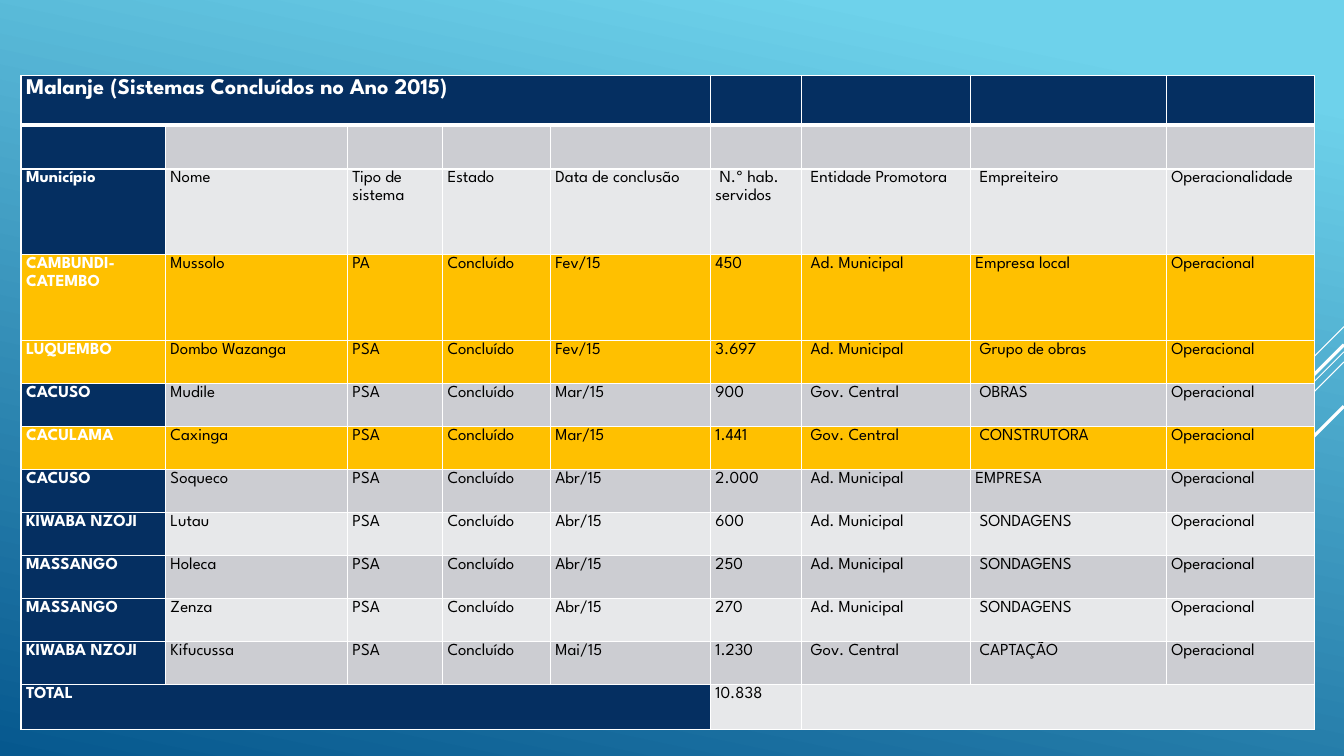
from pptx import Presentation
from pptx.dml.color import RGBColor
from pptx.enum.shapes import MSO_CONNECTOR
from pptx.oxml import parse_xml
from pptx.oxml.ns import nsdecls
from pptx.oxml.xmlchemy import OxmlElement
from pptx.util import Pt

NAVY = RGBColor(0x05, 0x2F, 0x61)
GOLD = RGBColor(0xFF, 0xC0, 0x00)
GREY = RGBColor(0xCC, 0xCD, 0xD2)
PALE = RGBColor(0xE7, 0xE8, 0xEA)
WHITE = RGBColor(0xFF, 0xFF, 0xFF)
BLACK = RGBColor(0x00, 0x00, 0x00)
SKY = RGBColor(0x6E, 0xD2, 0xEB)
DEEP = RGBColor(0x06, 0x58, 0x8E)
FONT = "League Spartan"

WIDTH, HEIGHT = 960, 540
COLS = [103.2, 130, 67.9, 77.1, 114.3, 65, 120.7, 140, 105.7]
ROWS = [35.3, 31.4, 61.4, 61.4] + [30.7] * 8 + [32.1]

TITLE = "Malanje (Sistemas Concluídos no Ano 2015)"
HEAD = ["Município", "Nome", "Tipo de sistema", "Estado", "Data de conclusão",
        "N.º hab. servidos", "Entidade Promotora", "Empreiteiro", "Operacionalidade"]
# Town, name, type, date, people served, promoter, builder
WORKS = [
    ("CAMBUNDI-CATEMBO", "Mussolo", "PA", "Fev/15", "450", "Ad. Municipal", "Empresa local"),
    ("LUQUEMBO", "Dombo Wazanga", "PSA", "Fev/15", "3.697", "Ad. Municipal", "Grupo de obras"),
    ("CACUSO", "Mudile", "PSA", "Mar/15", "900", "Gov. Central", "OBRAS"),
    ("CACULAMA", "Caxinga", "PSA", "Mar/15", "1.441", "Gov. Central", "CONSTRUTORA"),
    ("CACUSO", "Soqueco", "PSA", "Abr/15", "2.000", "Ad. Municipal", "EMPRESA"),
    ("KIWABA NZOJI", "Lutau", "PSA", "Abr/15", "600", "Ad. Municipal", "SONDAGENS"),
    ("MASSANGO", "Holeca", "PSA", "Abr/15", "250", "Ad. Municipal", "SONDAGENS"),
    ("MASSANGO", "Zenza", "PSA", "Abr/15", "270", "Ad. Municipal", "SONDAGENS"),
    ("KIWABA NZOJI", "Kifucussa", "PSA", "Mai/15", "1.230", "Gov. Central", "CAPTAÇÃO"),
]
GOLDEN = {3, 4, 6}  # highlighted table rows
FLUSH = {(3, 7), (7, 7)}  # builder cells without the small indent
LAST = len(ROWS) - 1


def paint_back(slide):
    fill = slide.background.fill
    fill.gradient()
    fill.gradient_angle = 258
    for stop, color, place in zip(fill.gradient_stops, (SKY, DEEP), (0.1, 1)):
        stop.color.rgb = color
        stop.position = place


def draw_rays(slide, right):
    # Diagonals falling left from the slide edge: top, length, weight
    for top, size, weight in [(233.3, 72, 0.75), (251.3, 234.7, 0.75),
                              (258.5, 149, 0.75), (246.2, 137.5, 2.25),
                              (290.2, 100, 2.25)]:
        ray = slide.shapes.add_connector(
            MSO_CONNECTOR.STRAIGHT, Pt(right), Pt(top), Pt(right - size), Pt(top + size))
        ray.line.color.rgb = WHITE
        ray.line.width = Pt(weight)
        ray._element.spPr.append(OxmlElement("a:effectLst"))


def row_texts():
    works = [[town, name, kind, "Concluído", date, people, owner, firm, "Operacional"]
             for town, name, kind, date, people, owner, firm in WORKS]
    total = ["TOTAL"] + [""] * 4 + ["10.838"] + [""] * 3
    return [[TITLE] + [""] * 8, [""] * 9, HEAD] + works + [total]


def cell_fill(row, col):
    if row in GOLDEN:
        return GOLD
    if row == 0 or col == 0:
        return NAVY
    return GREY if row % 2 else PALE


def add_edges(cell, row):
    props = cell._tc.get_or_add_tcPr()
    for side in "LRTB":
        thick = (row, side) in ((0, "B"), (1, "T"))
        props.append(parse_xml(
            f'<a:ln{side} {nsdecls("a")} w="{Pt(3 if thick else 1)}"><a:solidFill>'
            f'<a:srgbClr val="{WHITE}"/></a:solidFill></a:ln{side}>'))


def style_cell(cell, text, row, col):
    add_edges(cell, row)
    cell.fill.solid()
    cell.fill.fore_color.rgb = cell_fill(row, col)
    cell.margin_left = cell.margin_right = Pt(3.6)
    cell.margin_top = cell.margin_bottom = 0
    if not text:
        return
    cell.text_frame.text = text
    para = cell.text_frame.paragraphs[0]
    para.line_spacing = 1.15
    if (row, col) == (2, 5) or col in (6, 7) and (row, col) not in FLUSH:
        para._p.get_or_add_pPr().set("indent", str(Pt(3)))
    font = para.runs[0].font
    font.name = FONT
    font.size = Pt(16 if row == 0 else 12)
    font.bold = col == 0
    font.color.rgb = WHITE if col == 0 else BLACK


def add_works(slide, left, top):
    table = slide.shapes.add_table(len(ROWS), len(COLS), Pt(left), Pt(top),
                                   Pt(sum(COLS)), Pt(sum(ROWS))).table
    table.first_row = table.horz_banding = False
    for col, width in zip(table.columns, COLS):
        col.width = Pt(width)
    for row, height in zip(table.rows, ROWS):
        row.height = Pt(height)
    for row, texts in enumerate(row_texts()):
        for col, text in enumerate(texts):
            style_cell(table.cell(row, col), text, row, col)
    # Joined cells in the title and total rows
    for row, start, end in [(0, 0, 4), (LAST, 0, 4), (LAST, 6, 8)]:
        table.cell(row, start).merge(table.cell(row, end))


def main():
    deck = Presentation()
    deck.slide_width, deck.slide_height = Pt(WIDTH), Pt(HEIGHT)
    slide = deck.slides.add_slide(deck.slide_layouts[6])
    paint_back(slide)
    draw_rays(slide, WIDTH)
    add_works(slide, 15, 54)
    deck.save("out.pptx")


if __name__ == "__main__":
    main()
